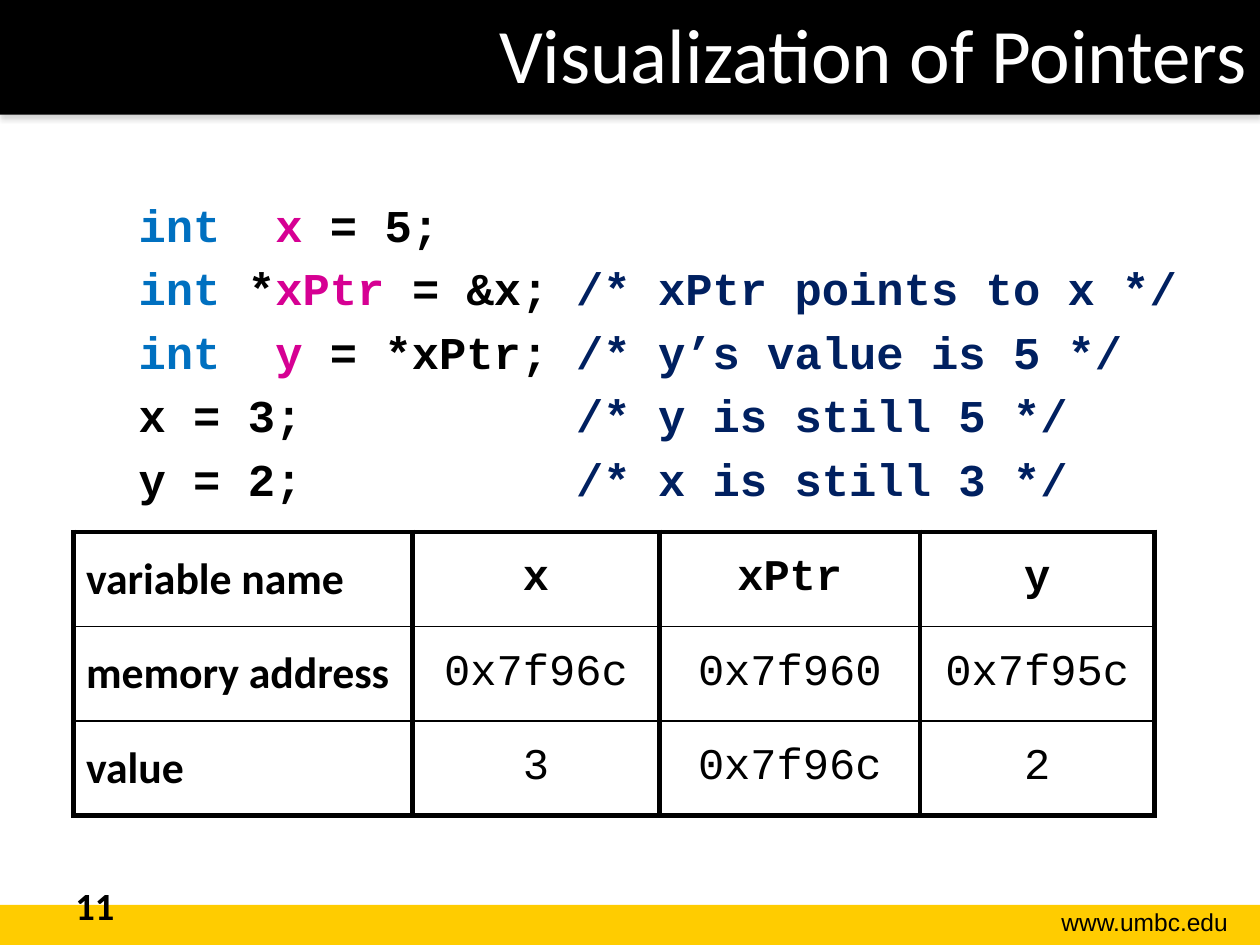
from lxml import etree
from pptx import Presentation
from pptx.dml.color import RGBColor
from pptx.enum.shapes import MSO_SHAPE
from pptx.enum.text import MSO_ANCHOR, MSO_AUTO_SIZE, PP_ALIGN
from pptx.oxml import parse_xml
from pptx.oxml.ns import nsdecls, qn
from pptx.util import Pt

RECTANGLE = MSO_SHAPE.RECTANGLE
TOP, MIDDLE = MSO_ANCHOR.TOP, MSO_ANCHOR.MIDDLE
LEFT, CENTER, RIGHT = PP_ALIGN.LEFT, PP_ALIGN.CENTER, PP_ALIGN.RIGHT
NO_AUTOFIT = MSO_AUTO_SIZE.NONE
SLIDE_WIDTH, SLIDE_HEIGHT = 720, 540

COLORS = {
    "black": "000000",
    "white": "FFFFFF",
    "gold": "FFCC00",
    "keyword": "0070C0",
    "variable": "D60093",
    "comment": "002060",
    "shadow": "808080",
}

# Each code line is a list of (text, colour) pieces
CODE = [
    [("int  ", "keyword"), ("x", "variable"), (" = 5;", "black")],
    [("int ", "keyword"), ("*", "black"), ("xPtr ", "variable"),
     ("= &x; ", "black"), ("/* xPtr points to x */", "comment")],
    [("int  ", "keyword"), ("y", "variable"), (" = *xPtr; ", "black"),
     ("/* y’s value is 5 */", "comment")],
    [("x = 3;          ", "black"), ("/* y is still 5 */", "comment")],
    [("y = 2;          ", "black"), ("/* x is still 3 */", "comment")],
]

MEMORY_TABLE = [
    ["variable name", "x", "xPtr", "y"],
    ["memory address", "0x7f96c", "0x7f960", "0x7f95c"],
    ["value", "3", "0x7f96c", "2"],
]
COLUMN_WIDTHS = [193.7, 141.1, 149, 133.9]
ROW_HEIGHT = 54


def rgb(name):
    return RGBColor.from_string(COLORS[name])


def place(shape, left, top, width, height):
    shape.left, shape.top = Pt(left), Pt(top)
    shape.width, shape.height = Pt(width), Pt(height)


def write(paragraph, text, size, font="Calibri", color="black", bold=False, align=LEFT):
    paragraph.alignment = align
    run = paragraph.add_run()
    run.text = text
    run.font.size = Pt(size)
    run.font.name = font
    run.font.bold = bold
    run.font.color.rgb = rgb(color)


def add_bar(slide, top, height, color):
    bar = slide.shapes.add_shape(RECTANGLE, 0, Pt(top), Pt(SLIDE_WIDTH), Pt(height))
    bar.shadow.inherit = False
    bar.fill.solid()
    bar.fill.fore_color.rgb = rgb(color)
    bar.line.fill.background()
    return bar


def add_drop_shadow(shape):
    effects = shape.element.spPr.find(qn("a:effectLst"))
    effects.append(parse_xml(
        f'<a:outerShdw {nsdecls("a")} blurRad="{Pt(3.1)}" dist="{Pt(1.8)}" '
        f'dir="5400000" rotWithShape="0"><a:srgbClr val="{COLORS["shadow"]}">'
        '<a:alpha val="35000"/></a:srgbClr></a:outerShdw>'))


def add_label(slide, box, text, size, **style):
    label = slide.shapes.add_textbox(*(Pt(length) for length in box))
    label.text_frame.word_wrap = True
    write(label.text_frame.paragraphs[0], text, size, **style)


def prepare_placeholder(shape, box):
    place(shape, *box)
    # Keep the placeholder in front of the bars
    shape.element.getparent().append(shape.element)
    frame = shape.text_frame
    frame.auto_size = NO_AUTOFIT
    frame.word_wrap = True
    frame.vertical_anchor = TOP
    return frame


def fill_code(frame):
    for index, pieces in enumerate(CODE):
        paragraph = frame.paragraphs[0] if index == 0 else frame.add_paragraph()
        paragraph.level = 1
        paragraph.space_before = Pt(5.2 if index else 0)
        properties = paragraph._p.get_or_add_pPr()
        properties.set("marL", str(Pt(36)))
        properties.set("indent", "0")
        etree.SubElement(properties, qn("a:buNone"))
        for text, color in pieces:
            write(paragraph, text, 26, font="Courier New", color=color, bold=True)


def set_borders(cell, top, bottom):
    properties = cell._tc.get_or_add_tcPr()
    for side, width in (("L", 3), ("R", 3), ("T", top), ("B", bottom)):
        properties.append(parse_xml(
            f'<a:ln{side} {nsdecls("a")} w="{Pt(width)}"><a:solidFill>'
            f'<a:srgbClr val="{COLORS["black"]}"/></a:solidFill></a:ln{side}>'))


def add_memory_table(slide, left, top):
    row_count = len(MEMORY_TABLE)
    table = slide.shapes.add_table(
        row_count, len(COLUMN_WIDTHS), Pt(left), Pt(top),
        Pt(sum(COLUMN_WIDTHS)), Pt(ROW_HEIGHT * row_count)).table
    table.first_row = table.horz_banding = False
    for column, width in zip(table.columns, COLUMN_WIDTHS):
        column.width = Pt(width)
    for row, values in enumerate(MEMORY_TABLE):
        table.rows[row].height = Pt(ROW_HEIGHT)
        for column, value in enumerate(values):
            cell = table.cell(row, column)
            cell.vertical_anchor = MIDDLE
            set_borders(cell, top=3 if row == 0 else 1,
                        bottom=3 if row == row_count - 1 else 1)
            cell.fill.background()
            is_heading = column == 0
            write(cell.text_frame.paragraphs[0], value, 25,
                  font="Calibri" if is_heading else "Courier New",
                  bold=is_heading or row == 0,
                  align=LEFT if is_heading else CENTER)


def main():
    presentation = Presentation()
    presentation.slide_width, presentation.slide_height = Pt(SLIDE_WIDTH), Pt(SLIDE_HEIGHT)
    slide = presentation.slides.add_slide(presentation.slide_layouts[1])

    # Footer and header bars
    add_bar(slide, 517, 23, "gold")
    add_drop_shadow(add_bar(slide, 0, 65.5, "black"))
    add_label(slide, (565.5, 515, 143.3, 24.5), "www.umbc.edu", 14,
              font="Arial", align=RIGHT)

    # Title
    title = prepare_placeholder(slide.shapes.title, (72, 0, 648, 90))
    write(title.paragraphs[0], "Visualization of Pointers", 44, color="white", align=RIGHT)

    # Slide number
    add_label(slide, (36, 500.4, 167.8, 28.8), "11", 22, bold=True)

    # Code and the memory it describes
    fill_code(prepare_placeholder(slide.placeholders[1], (36, 108.7, 648, 373.7)))
    add_memory_table(slide, 42, 304)

    presentation.save("out.pptx")


if __name__ == "__main__":
    main()
